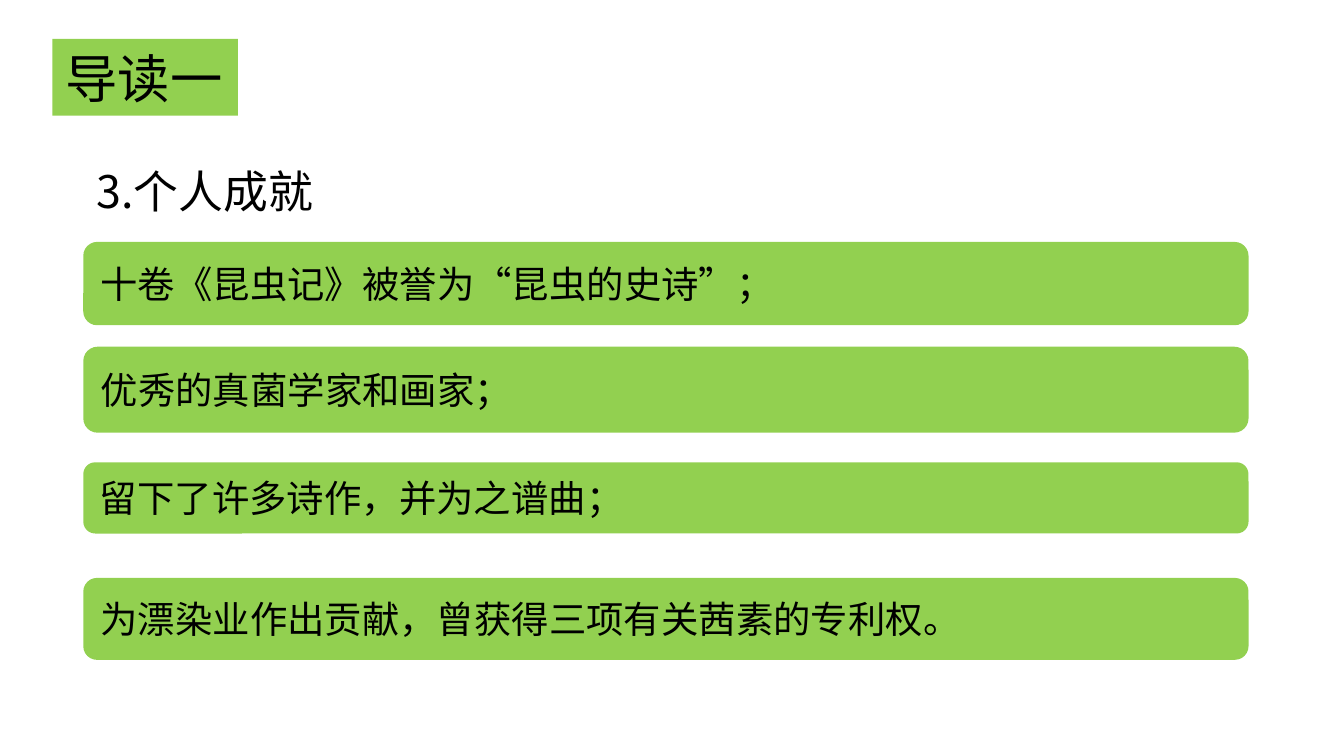
from dataclasses import dataclass

from lxml import etree
from pptx import Presentation
from pptx.dml.color import RGBColor
from pptx.enum.lang import MSO_LANGUAGE_ID
from pptx.enum.shapes import MSO_SHAPE
from pptx.enum.text import MSO_ANCHOR, MSO_AUTO_SIZE, PP_ALIGN
from pptx.oxml.ns import qn
from pptx.util import Inches, Pt

RECTANGLE = MSO_SHAPE.RECTANGLE
ROUNDED = MSO_SHAPE.ROUNDED_RECTANGLE
MIDDLE = MSO_ANCHOR.MIDDLE
LEFT = PP_ALIGN.LEFT
GROW = MSO_AUTO_SIZE.SHAPE_TO_FIT_TEXT
CHINESE = MSO_LANGUAGE_ID.SIMPLIFIED_CHINESE


@dataclass(frozen=True)
class Theme:
    """Colours, typeface and type sizes of the slide."""

    green: RGBColor = RGBColor(0x92, 0xD0, 0x50)
    ink: RGBColor = RGBColor(0, 0, 0)
    typeface: str = "Noto Sans CJK SC"
    title: Pt = Pt(28)
    heading: Pt = Pt(24)
    body: Pt = Pt(20)


THEME = Theme()
SLIDE_WIDTH = 10
SLIDE_HEIGHT = SLIDE_WIDTH * 9 / 16
CONTENT_LEFT = 0.62
BAR_WIDTH = 8.67
ACHIEVEMENTS = (
    (1.8, 0.62, "十卷《昆虫记》被誉为“昆虫的史诗”；"),
    (2.58, 0.64, "优秀的真菌学家和画家；"),
    (3.44, 0.53, "留下了许多诗作，并为之谱曲；"),
    (4.3, 0.61, "为漂染业作出贡献，曾获得三项有关茜素的专利权。"),
)


def write_text(frame, text, size):
    """Write one left-aligned line of Chinese text."""
    para = frame.paragraphs[0]
    para.alignment = LEFT
    span = para.add_run()
    span.text = text
    font = span.font
    font.size = size
    font.color.rgb = THEME.ink
    font.name = THEME.typeface
    font.language_id = CHINESE
    east_asian = etree.SubElement(span._r.get_or_add_rPr(), qn("a:ea"))
    east_asian.set("typeface", THEME.typeface)


def add_heading(page, left, top, width, height, text):
    """Add the section heading as a plain text box."""
    box = page.shapes.add_textbox(
        Inches(left), Inches(top), Inches(width), Inches(height))
    box.text_frame.word_wrap = True
    write_text(box.text_frame, text, THEME.heading)


def add_panel(page, kind, left, top, width, height, text, size):
    """Add a green panel with vertically centred text."""
    panel = page.shapes.add_shape(
        kind, Inches(left), Inches(top), Inches(width), Inches(height))
    panel.shadow.inherit = False
    panel.fill.solid()
    panel.fill.fore_color.rgb = THEME.green
    panel.line.fill.background()
    frame = panel.text_frame
    frame.word_wrap = True
    frame.vertical_anchor = MIDDLE
    write_text(frame, text, size)
    return panel


def add_title(page):
    """Add the title label, which grows with its unwrapped text."""
    title = add_panel(
        page, RECTANGLE, 0.39, 0.29, 1.38, 0.57, "导读一", THEME.title)
    title.text_frame.word_wrap = False
    title.text_frame.auto_size = GROW


def main():
    """Build and save the slide."""
    deck = Presentation()
    deck.slide_width = Inches(SLIDE_WIDTH)
    deck.slide_height = Inches(SLIDE_HEIGHT)
    page = deck.slides.add_slide(deck.slide_layouts[6])
    add_heading(page, CONTENT_LEFT, 1.17, 9.08, 0.86, "3.个人成就")
    for top, height, text in ACHIEVEMENTS:
        add_panel(page, ROUNDED, CONTENT_LEFT, top, BAR_WIDTH, height,
                  text, THEME.body)
    add_title(page)
    deck.save("out.pptx")


if __name__ == "__main__":
    main()
